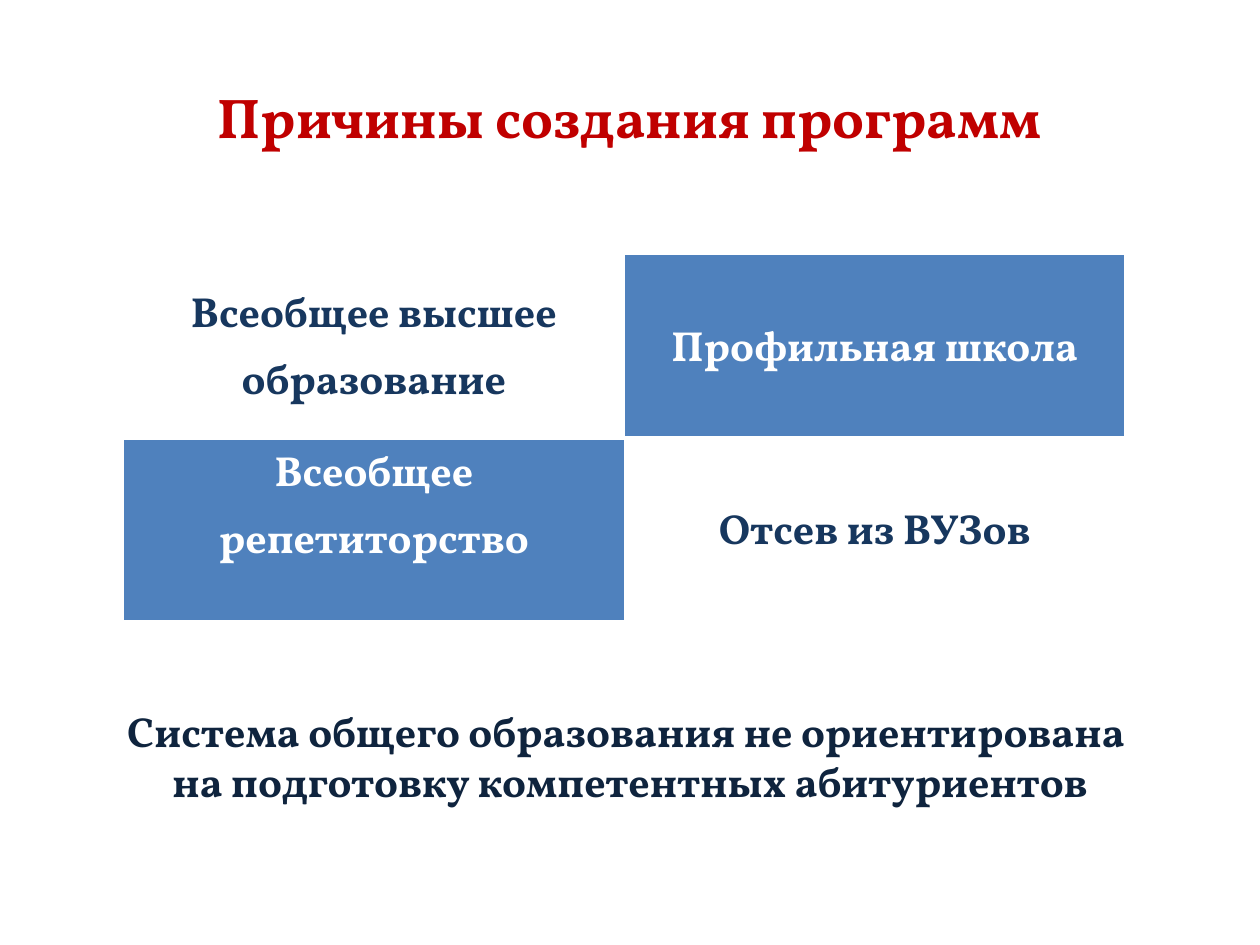
from dataclasses import dataclass

from lxml.etree import SubElement
from pptx import Presentation
from pptx.dml.color import RGBColor
from pptx.enum.text import MSO_ANCHOR, PP_ALIGN
from pptx.oxml.ns import qn
from pptx.util import Inches, Pt


@dataclass(frozen=True)
class Theme:
    font: str = "Vollkorn"
    title: str = "C00000"
    dark: str = "17375E"
    closing: str = "0F243E"
    blue: str = "4F81BD"
    white: str = "FFFFFF"
    title_size: int = 32
    body_size: int = 24
    thin: int = 1
    thick: int = 3


THEME = Theme()


def write(tf, lines, size, color, spacing=None):
    tf.text = "\n".join(lines)
    for p in tf.paragraphs:
        p.alignment = PP_ALIGN.CENTER
        p.line_spacing = spacing
        for r in p.runs:
            r.font.name = THEME.font
            r.font.size = Pt(size)
            r.font.bold = True
            r.font.color.rgb = RGBColor.from_string(color)


def add_text(slide, box, lines, size, color):
    tf = slide.shapes.add_textbox(*map(Inches, box)).text_frame
    tf.word_wrap = True
    tf.margin_top = tf.margin_bottom = 0
    tf.vertical_anchor = MSO_ANCHOR.MIDDLE
    write(tf, lines, size, color)


def add_border(cell, side, width):
    ln = SubElement(cell._tc.get_or_add_tcPr(), qn(f"a:ln{side}"), w=str(Pt(width)))
    fill = SubElement(ln, qn("a:solidFill"))
    SubElement(fill, qn("a:srgbClr"), val=THEME.white)


def add_reasons(slide, box, rows):
    left, top, width, height = box
    frame = slide.shapes.add_table(len(rows), len(rows[0]), *map(Inches, box))
    table = frame.table
    for col in table.columns:
        col.width = Inches(width / len(rows[0]))
    for i, row in enumerate(rows):
        table.rows[i].height = Inches(height / len(rows))
        for j, (text, anchor) in enumerate(row):
            cell = table.cell(i, j)
            filled = (i + j) % 2 == 1
            cell.margin_left = cell.margin_right = Inches(0.07)
            cell.margin_top = cell.margin_bottom = 0
            cell.vertical_anchor = anchor
            for side in "LRTB":
                inner = side == ("B" if i == 0 else "T")
                add_border(cell, side, THEME.thick if inner else THEME.thin)
            cell.fill.solid()
            cell.fill.fore_color.rgb = RGBColor.from_string(
                THEME.blue if filled else THEME.white)
            write(cell.text_frame, [text], THEME.body_size,
                  THEME.white if filled else THEME.dark, 1.15)


def main():
    prs = Presentation()
    prs.slide_width, prs.slide_height = Inches(10), Inches(7.5)
    slide = prs.slides.add_slide(prs.slide_layouts[6])
    add_text(slide, (0.5, 0.3, 9, 1.25), ["Причины создания программ"],
             THEME.title_size, THEME.title)
    add_text(slide, (0.5, 5.52, 9, 0.95),
             ["Система общего образования не ориентирована ",
              "на подготовку компетентных абитуриентов"],
             THEME.body_size, THEME.closing)
    add_reasons(slide, (0.98, 2.02, 7.95, 2.91), [
        [("Всеобщее высшее образование", MSO_ANCHOR.MIDDLE),
         ("Профильная школа", MSO_ANCHOR.MIDDLE)],
        [("Всеобщее репетиторство", MSO_ANCHOR.TOP),
         ("Отсев из ВУЗов", MSO_ANCHOR.MIDDLE)],
    ])
    prs.save("out.pptx")


if __name__ == "__main__":
    main()
